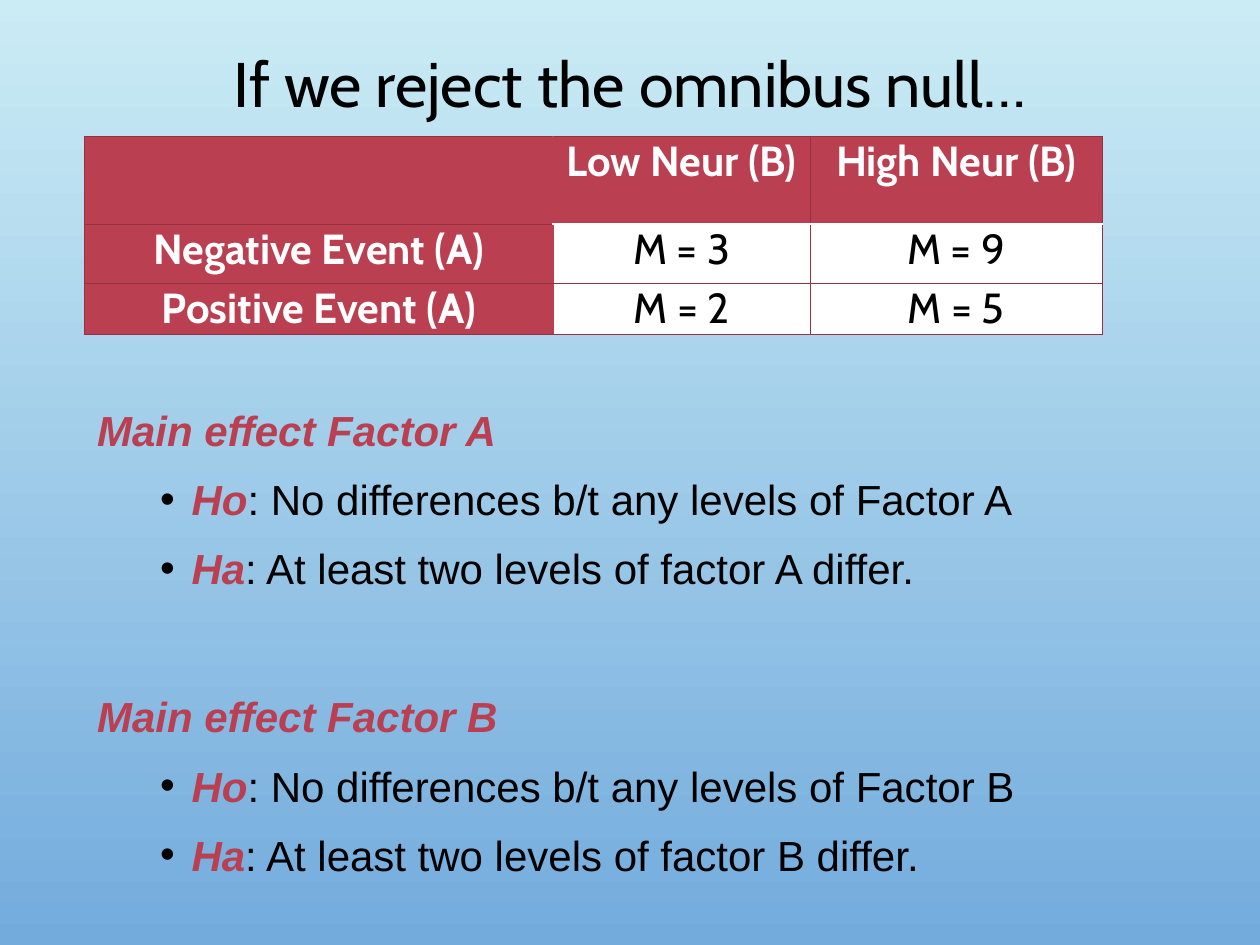
from lxml.etree import SubElement
from pptx import Presentation
from pptx.enum.text import MSO_ANCHOR, MSO_AUTO_SIZE, PP_ALIGN
from pptx.dml.color import RGBColor
from pptx.oxml.ns import qn
from pptx.util import Inches, Pt

COLORS = {
    "sky": "CBECF5",
    "blue": "73ABDD",
    "accent": "BA3F51",
    "border": "953241",
    "black": "000000",
    "white": "FFFFFF",
}
TABLE_ROWS = [
    ["", "Low Neur (B)", "High Neur (B)"],
    ["Negative Event (A)", "M = 3", "M = 9"],
    ["Positive Event (A)", "M = 2", "M = 5"],
]
COLUMN_WIDTHS = [3.72, 2.04, 2.32]
ROW_HEIGHTS = [0.7, 0.47, 0.38]
HYPOTHESES = {
    "Ho": ": No differences b/t any levels of Factor {}",
    "Ha": ": At least two levels of factor {} differ.",
}
SECTION_GAP = 50


def add_text(paragraph, text, font="Arial", size=24, color="black", bold=False, italic=False):
    run = paragraph.add_run()
    run.text = text
    run.font.name = font
    run.font.size = Pt(size)
    run.font.color.rgb = RGBColor.from_string(COLORS[color])
    run.font.bold = bold
    run.font.italic = italic


def set_bullet(paragraph, character=None, left=0, hanging=0):
    properties = paragraph._p.get_or_add_pPr()
    properties.set("marL", str(Inches(left)))
    properties.set("indent", str(-Inches(hanging)))
    if character is None:
        SubElement(properties, qn("a:buNone"))
        return
    bullet_color = SubElement(properties, qn("a:buClr"))
    SubElement(bullet_color, qn("a:srgbClr"), val=COLORS["black"])
    SubElement(properties, qn("a:buFont"), typeface="Arial")
    SubElement(properties, qn("a:buChar"), char=character)


def set_border(cell, side, color, width):
    """Draw one side (L, R, T or B); call in that order and before the fill."""
    line = SubElement(cell._tc.get_or_add_tcPr(), qn(f"a:ln{side}"), w=str(Pt(width)))
    fill = SubElement(line, qn("a:solidFill"))
    SubElement(fill, qn("a:srgbClr"), val=COLORS[color])


class SlideBuilder:
    """Holds the heading font and the current slide."""

    heading_font = "Cabin"

    def __init__(self, presentation):
        self.slide = presentation.slides.add_slide(presentation.slide_layouts[1])

    def background(self, top, bottom):
        fill = self.slide.background.fill
        fill.gradient()
        fill.gradient_angle = 270
        for stop, color, position in zip(fill.gradient_stops, (top, bottom), (0, 1)):
            stop.color.rgb = RGBColor.from_string(COLORS[color])
            stop.position = position

    def place(self, shape, left, top, width, height):
        shape.left, shape.top = Inches(left), Inches(top)
        shape.width, shape.height = Inches(width), Inches(height)
        shape.text_frame.word_wrap = True
        shape.text_frame.auto_size = MSO_AUTO_SIZE.NONE

    def title(self, text):
        shape = self.slide.shapes.title
        self.place(shape, 0.5, 0.3, 9, 0.78)
        shape.text_frame.vertical_anchor = MSO_ANCHOR.MIDDLE
        paragraph = shape.text_frame.paragraphs[0]
        paragraph.alignment = PP_ALIGN.CENTER
        paragraph.line_spacing = 0.9
        add_text(paragraph, text, font=self.heading_font, size=36)

    def effects(self, factors):
        shape = self.slide.placeholders[1]
        self.place(shape, 0.67, 3.08, 9, 3.33)
        frame = shape.text_frame
        for index, factor in enumerate(factors):
            heading = frame.add_paragraph() if index else frame.paragraphs[0]
            heading.line_spacing = 1.2
            heading.space_before = Pt(SECTION_GAP if index else 0)
            set_bullet(heading)
            add_text(heading, f"Main effect Factor {factor}", color="accent", bold=True, italic=True)
            for label, statement in HYPOTHESES.items():
                item = frame.add_paragraph()
                item.level = 1
                item.line_spacing = 1.2
                item.space_before = Pt(5)
                set_bullet(item, "•", left=0.75, hanging=0.25)
                add_text(item, label, color="accent", bold=True, italic=True)
                add_text(item, statement.format(factor))

    def table(self, rows, left, top):
        table = self.slide.shapes.add_table(
            len(rows), len(rows[0]), Inches(left), Inches(top),
            Inches(sum(COLUMN_WIDTHS)), Inches(sum(ROW_HEIGHTS)),
        ).table
        for column, width in zip(table.columns, COLUMN_WIDTHS):
            column.width = Inches(width)
        for row, height in zip(table.rows, ROW_HEIGHTS):
            row.height = Inches(height)
        for row_index, row in enumerate(rows):
            for column_index, text in enumerate(row):
                self.cell(table.cell(row_index, column_index), text, row_index, column_index)

    def cell(self, cell, text, row, column):
        is_heading = row == 0 or column == 0
        thin, accent, white = ("border", 0.75), ("accent", 1.25), ("white", 1.25)
        set_border(cell, "L", *(accent if column == 1 else thin))
        set_border(cell, "R", *(accent if column == 0 else thin))
        set_border(cell, "T", *(white if row == 1 and column else thin))
        set_border(cell, "B", *(white if row == 0 and column else thin))
        cell.fill.solid()
        cell.fill.fore_color.rgb = RGBColor.from_string(COLORS["accent" if is_heading else "white"])
        cell.margin_left = cell.margin_right = Inches(0.07)
        cell.margin_top = cell.margin_bottom = 0
        if text:
            paragraph = cell.text_frame.paragraphs[0]
            paragraph.alignment = PP_ALIGN.CENTER
            add_text(paragraph, text, font=self.heading_font,
                     color="white" if is_heading else "black", bold=is_heading)


def main():
    presentation = Presentation()
    presentation.slide_width, presentation.slide_height = Inches(10), Inches(7.5)
    builder = SlideBuilder(presentation)
    builder.background("sky", "blue")
    builder.title("If we reject the omnibus null…")
    builder.effects("AB")
    builder.table(TABLE_ROWS, 0.67, 1.08)
    presentation.save("out.pptx")


if __name__ == "__main__":
    main()
